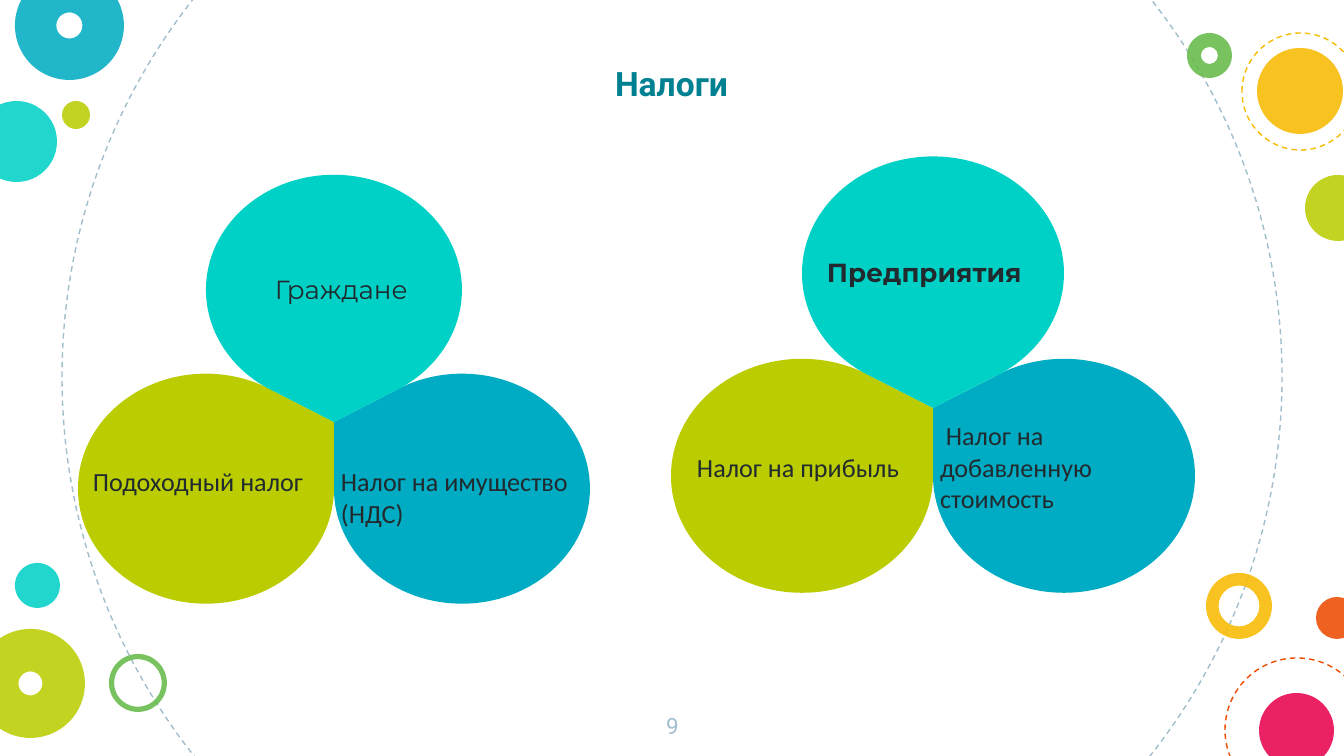
from itertools import pairwise
from math import cos, radians, sin, tan

from lxml.etree import SubElement
from pptx import Presentation
from pptx.dml.color import RGBColor
from pptx.enum.dml import MSO_LINE_DASH_STYLE as Dash
from pptx.enum.shapes import MSO_SHAPE as Preset
from pptx.enum.text import MSO_ANCHOR as Anchor, PP_ALIGN as Align
from pptx.oxml.ns import qn
from pptx.util import Emu, Pt

EMU_PER_PX = 914400 / 134.4
WIDTH, HEIGHT = 1344, 756
COLORS = {
    "teal": "00D1C6", "lime": "BBCD00", "blue": "00ACC3", "yellow": "F8BB00",
    "orange": "ED4A00", "green": "65BB48", "pink": "E8004C",
    "gray": "A1BECC", "title": "008192", "text": "212A2E",
}
RINGS = [
    (62, -233, 1220, "gray"),
    (1225, 658, 144, "orange"),
    (1242, 33, 117, "yellow"),
]
DISCS = [
    (-24, 101, 81, "teal"), (62, 101, 28, "lime"), (1316, 597, 42, "orange"),
    (1259, 693, 75, "pink"), (1257, 48, 86, "yellow"),
    (1305, 175, 66, "lime"), (15, 563, 45, "teal"),
]
DONUTS = [
    (1206, 573, 66, "yellow", 0.19), (15, -29, 109, "blue", 0.38),
    (109, 654, 58, "green", 0.09), (-24, 629, 109, "lime", 0.39),
    (1187, 33, 45, "green", 0.31),
]
LABELS = [
    ("Налоги", (284, 22, 775, 94), Anchor.BOTTOM, 18, True, "title"),
    ("9", (638, 699, 69, 58), Anchor.TOP, 12, False, "gray"),
]
PETALS = {
    "right": {"color": "blue", "center": (1, 0.58),
              "angles": (-123, -90, 0, 90, 180)},
    "left": {"color": "lime", "center": (-1, 0.58),
             "angles": (0, 90, 180, 270, 303)},
    "top": {"color": "teal", "center": (0, -1.15),
            "angles": (117, 180, 270, 360, 423)},
}
FLOWERS = [
    {"tip": (334, 422), "radii": (128, 115), "texts": {
        "right": ("Налог на имущество (НДС)", "Calibri", False, 7, 92),
        "left": ("Подоходный налог", "Calibri", False, 15, 92),
        "top": ("Граждане", "Montserrat", False, 69, 99),
    }},
    {"tip": (933, 408), "radii": (131, 117), "texts": {
        "right": (" Налог на\nдобавленную стоимость", "Calibri", False, 7, 61),
        "left": ("Налог на прибыль", "Calibri", False, 26, 93),
        "top": ("Предприятия", "Montserrat", True, 25, 100),
    }},
]


def px(value):
    return Emu(round(value * EMU_PER_PX))


def rgb(name):
    return RGBColor.from_string(COLORS[name])


def paint(shape, color, alpha=None):
    shape.shadow.inherit = False
    shape.line.fill.background()
    shape.fill.solid()
    shape.fill.fore_color.rgb = rgb(color)
    if alpha:
        color_element = shape.fill._xPr.find(qn("a:solidFill"))[0]
        SubElement(color_element, qn("a:alpha"), val=str(alpha * 1000))


def add_round(slide, preset, left, top, size):
    return slide.shapes.add_shape(preset, px(left), px(top), px(size), px(size))


def add_ring(slide, left, top, size, color):
    ring = add_round(slide, Preset.OVAL, left, top, size)
    ring.shadow.inherit = False
    ring.fill.background()
    ring.line.color.rgb = rgb(color)
    ring.line.width = Pt(0.75)
    ring.line.dash_style = Dash.DASH


def set_text(shape, text, font, size, bold, color, align, anchor, margins):
    frame = shape.text_frame
    frame.text = text
    frame.word_wrap = True
    frame.vertical_anchor = anchor
    (frame.margin_left, frame.margin_top,
     frame.margin_right, frame.margin_bottom) = map(px, margins)
    for paragraph in frame.paragraphs:
        paragraph.alignment = align
        for run in paragraph.runs:
            run.font.name = font
            run.font.size = Pt(size)
            run.font.bold = bold
            run.font.color.rgb = rgb(color)


def arc_point(center, radii, angle, offset=0):
    x = cos(angle) - offset * sin(angle)
    y = sin(angle) + offset * cos(angle)
    return px(center[0] + radii[0] * x), px(center[1] + radii[1] * y)


def bend_edges(shape, center, radii, angles):
    left, top = shape.left, shape.top
    edges = list(shape.element.iter(qn("a:lnTo")))[1:len(angles)]
    for edge, (start, end) in zip(edges, pairwise(angles)):
        offset = 4 / 3 * tan((end - start) / 4)
        handles = (arc_point(center, radii, start, offset),
                   arc_point(center, radii, end, -offset))
        edge.tag = qn("a:cubicBezTo")
        end_point = edge[0]
        for x, y in handles:
            handle = SubElement(edge, qn("a:pt"), x=str(x - left), y=str(y - top))
            end_point.addprevious(handle)


def add_petal(group, tip, radii, petal, label):
    center = [t + c * r for t, c, r in zip(tip, petal["center"], radii)]
    angles = [radians(angle) for angle in petal["angles"]]
    points = [arc_point(center, radii, angle) for angle in angles]
    builder = group.shapes.build_freeform(px(tip[0]), px(tip[1]))
    builder.add_line_segments(points, close=True)
    shape = builder.convert_to_shape()
    bend_edges(shape, center, radii, angles)
    paint(shape, petal["color"])
    text, font, bold, left, top = label
    set_text(shape, text, font, 14, bold, "text", Align.LEFT, Anchor.TOP,
             (left, top, 7, 5))


presentation = Presentation()
presentation.slide_width, presentation.slide_height = px(WIDTH), px(HEIGHT)
slide = presentation.slides.add_slide(presentation.slide_layouts[6])

for ring in RINGS:
    add_ring(slide, *ring)
for left, top, size, color in DISCS:
    paint(add_round(slide, Preset.OVAL, left, top, size), color, 87)
for left, top, size, color, thickness in DONUTS:
    donut = add_round(slide, Preset.DONUT, left, top, size)
    donut.adjustments[0] = thickness
    paint(donut, color, 87)

for text, box, anchor, size, bold, color in LABELS:
    label = slide.shapes.add_textbox(*map(px, box))
    set_text(label, text, "Roboto", size, bold, color, Align.CENTER, anchor,
             (13, 13, 13, 13))

for flower in FLOWERS:
    group = slide.shapes.add_group_shape()
    for name, petal in PETALS.items():
        add_petal(group, flower["tip"], flower["radii"], petal,
                  flower["texts"][name])

presentation.save("out.pptx")
